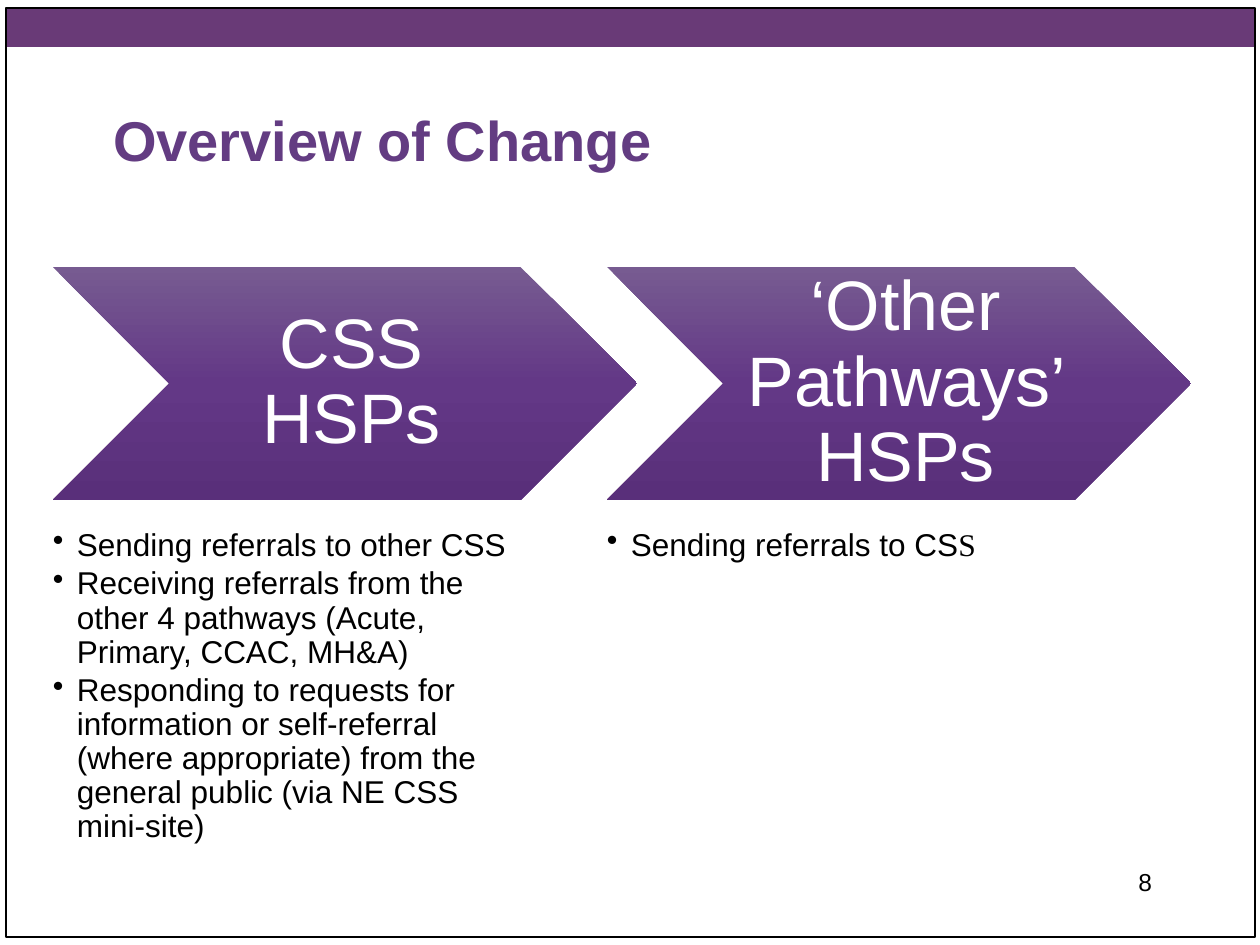
from lxml.etree import SubElement
from copy import deepcopy
from pptx import Presentation
from pptx.dml.color import RGBColor
from pptx.enum.shapes import MSO_SHAPE as Shape
from pptx.enum.text import MSO_ANCHOR as Anchor, MSO_AUTO_SIZE as AutoSize, PP_ALIGN as Align
from pptx.oxml.ns import qn
from pptx.util import Pt

SCALE = 914400 / 126
WHITE = RGBColor(0xFF, 0xFF, 0xFF)
BLACK = RGBColor(0, 0, 0)
BAND = RGBColor(0x69, 0x3A, 0x77)
TITLE = RGBColor(0x63, 0x3C, 0x82)
GRADIENT = [
    (0, RGBColor(0x77, 0x5B, 0x91)),
    (0.5, RGBColor(0x63, 0x38, 0x86)),
    (1, RGBColor(0x59, 0x2F, 0x7A)),
]
FONT = "Arial"
COLUMN_LEFT, COLUMN_STEP = 53, 554
COLUMNS = [
    ("CSS HSPs", [
        [("Sending referrals to other CSS", FONT)],
        [("Receiving referrals from the other 4 pathways (Acute, Primary, CCAC, MH&A)", FONT)],
        [("Responding to requests for information or self-referral (where appropriate) "
          "from the general public (via NE CSS mini-site)", FONT)],
    ]),
    ("‘Other Pathways’ HSPs", [
        [("Sending referrals to CS", FONT), ("S", "Times New Roman")],
    ]),
]


def px(length):
    return round(length * SCALE)


def place(box, bounds):
    box.left, box.top, box.width, box.height = map(px, bounds)


def set_frame(frame, anchor=Anchor.TOP, insets=(13, 6, 13, 6)):
    frame.word_wrap = True
    frame.auto_size = AutoSize.NONE
    frame.vertical_anchor = anchor
    (frame.margin_left, frame.margin_top,
     frame.margin_right, frame.margin_bottom) = map(px, insets)


def write(para, text, size, color=BLACK, font=FONT, bold=False, align=Align.LEFT, spacing=None):
    para.alignment = align
    if spacing:
        para.line_spacing = spacing
    span = para.add_run()
    span.text = text
    span.font.name = font
    span.font.size = Pt(size)
    span.font.bold = bold
    span.font.color.rgb = color


def add_shape(page, kind, bounds):
    shape = page.shapes.add_shape(kind, *map(px, bounds))
    shape.shadow.inherit = False
    return shape


def add_frame(page):
    band = add_shape(page, Shape.RECTANGLE, (6, 8, 1249, 39))
    band.fill.solid()
    band.fill.fore_color.rgb = BAND
    band.line.fill.background()
    border = add_shape(page, Shape.RECTANGLE, (6, 8, 1249, 929))
    border.fill.background()
    border.line.color.rgb = BLACK
    border.line.width = Pt(0.75)


def fill_gradient(fill):
    fill.gradient()
    fill.gradient_angle = 270
    stops = fill._fill._gradFill.find(qn("a:gsLst"))
    stops.append(deepcopy(stops[0]))
    for stop, (position, color) in zip(fill.gradient_stops, GRADIENT):
        stop.position = position
        stop.color.rgb = color


def add_chevron(page, left, text):
    chevron = add_shape(page, Shape.CHEVRON, (left, 267, 584, 233))
    fill_gradient(chevron.fill)
    chevron.line.fill.background()
    set_frame(chevron.text_frame, Anchor.MIDDLE, (21, 8, 8, 8))
    write(chevron.text_frame.paragraphs[0], text, 40, WHITE, align=Align.CENTER, spacing=0.9)


def add_text_box(page, bounds, **frame_format):
    box = page.shapes.add_textbox(*map(px, bounds))
    set_frame(box.text_frame, **frame_format)
    return box.text_frame


def add_bullets(page, left, items):
    frame = add_text_box(page, (left, 529, 467, 310), insets=(0, 0, 0, 0))
    for index, item in enumerate(items):
        para = frame.add_paragraph() if index else frame.paragraphs[0]
        para.space_after = Pt(2.7)
        properties = para._p.get_or_add_pPr()
        properties.set("marL", str(px(24)))
        properties.set("indent", str(px(-24)))
        SubElement(properties, qn("a:buChar"), char="•")
        for text, font in item:
            write(para, text, 18, font=font, spacing=0.9)


def main():
    deck = Presentation()
    deck.slide_width, deck.slide_height = px(1260), px(945)
    page = deck.slides.add_slide(deck.slide_layouts[5])
    add_frame(page)

    title = page.shapes.title
    place(title, (100, 53, 1071, 126))
    set_frame(title.text_frame, Anchor.BOTTOM)
    write(title.text_frame.paragraphs[0], "Overview of Change", 32, TITLE, bold=True)

    for index, (heading, items) in enumerate(COLUMNS):
        left = COLUMN_LEFT + index * COLUMN_STEP
        add_chevron(page, left, heading)
        add_bullets(page, left, items)

    number = add_text_box(page, (903, 861, 262, 63))
    write(number.paragraphs[0], "8", 14, align=Align.RIGHT)
    deck.save("out.pptx")


if __name__ == "__main__":
    main()
